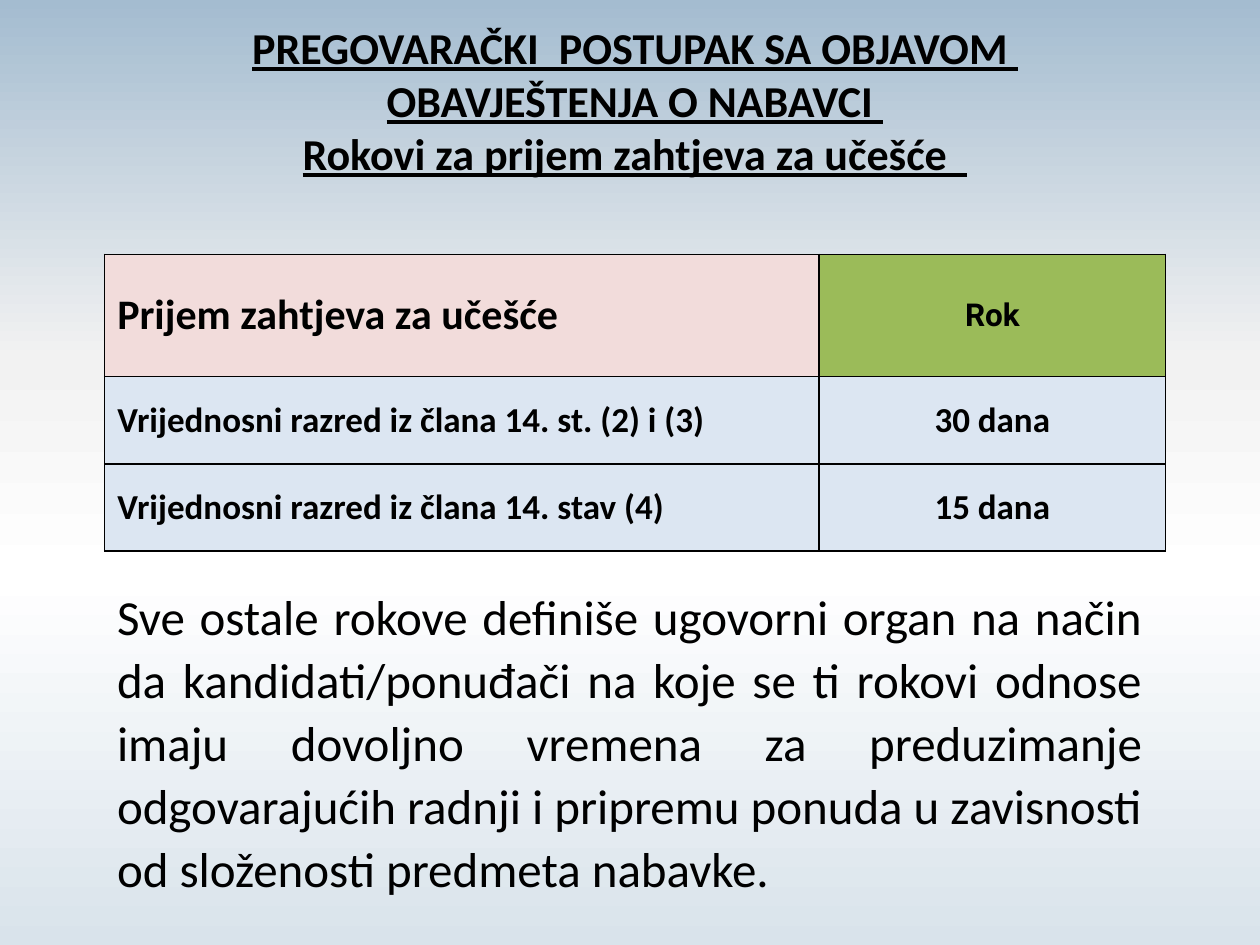
from copy import deepcopy

from lxml import etree
from pptx import Presentation
from pptx.dml.color import RGBColor
from pptx.enum.text import MSO_ANCHOR, MSO_AUTO_SIZE, PP_ALIGN
from pptx.oxml.ns import qn
from pptx.util import Cm, Pt

LEFT, CENTER, JUSTIFY = PP_ALIGN.LEFT, PP_ALIGN.CENTER, PP_ALIGN.JUSTIFY
MIDDLE = MSO_ANCHOR.MIDDLE
NO_FIT = MSO_AUTO_SIZE.NONE
GROW = MSO_AUTO_SIZE.SHAPE_TO_FIT_TEXT
TITLE_ONLY = 5


def color(hex_string):
    return RGBColor.from_string(hex_string)


def write(frame, text, size, font="Calibri", bold=False, underline=False,
          align=LEFT, line_spacing=1.0):
    """Fill the first paragraph; each newline becomes a line break."""
    para = frame.paragraphs[0]
    para.alignment = align
    para.line_spacing = line_spacing
    for number, line in enumerate(text.split("\n")):
        if number:
            para.add_line_break()
        span = para.add_run()
        span.text = line
        span.font.name = font
        span.font.size = Pt(size)
        span.font.bold = bold
        span.font.underline = underline
        span.font.color.rgb = color("000000")
    # A break needs the run format too, or it takes the default height.
    for line_break in para._p.findall(qn("a:br")):
        line_break.append(deepcopy(span._r.rPr))


deck = Presentation()
deck.slide_width, deck.slide_height = Cm(25.4), Cm(19.05)
page = deck.slides.add_slide(deck.slide_layouts[TITLE_ONLY])

# Background gradient, top to bottom
fill = page.background.fill
fill.gradient()
fill.gradient_angle = 270
stops = page.background._cSld.find(".//" + qn("a:gsLst"))
for stop in list(stops):
    stops.remove(stop)
for percent, shade in [(0, "A4BCD0"), (38, "F2F2F2"), (61, "FFFFFF"), (100, "D9E3EB")]:
    stop = etree.SubElement(stops, qn("a:gs"), pos=str(percent * 1000))
    etree.SubElement(stop, qn("a:srgbClr"), val=shade)

# Title
title = page.shapes.title
title.left, title.top, title.width, title.height = Cm(1.27), Cm(1.07), Cm(23.06), Cm(1.9)
title.text_frame.auto_size = NO_FIT
title.text_frame.vertical_anchor = MIDDLE
write(title.text_frame,
      "PREGOVARAČKI  POSTUPAK SA OBJAVOM \n"
      "OBAVJEŠTENJA O NABAVCI \n"
      "Rokovi za prijem zahtjeva za učešće  ",
      size=25.2, bold=True, underline=True, align=CENTER)

# Table of deadlines: text, size, font, fill
rows = [
    [("Prijem zahtjeva za učešće", 24, "Calibri", "F2DCDB"),
     ("Rok", 18, "Roboto", "9BBB59")],
    [("Vrijednosni razred iz člana 14. st. (2) i (3)", 20, "Calibri", "DCE6F2"),
     ("30 dana", 20, "Calibri", "DCE6F2")],
    [("Vrijednosni razred iz člana 14. stav (4)", 20, "Calibri", "DCE6F2"),
     ("15 dana", 20, "Calibri", "DCE6F2")],
]
table = page.shapes.add_table(3, 2, Cm(2.11), Cm(5.13), Cm(21.39), Cm(5.98)).table
for column, width in zip(table.columns, (14.4, 6.99)):
    column.width = Cm(width)
for row, height in zip(table.rows, (2.46, 1.76, 1.76)):
    row.height = Cm(height)

for row_number, row in enumerate(rows):
    for column_number, (text, size, font, shade) in enumerate(row):
        cell = table.cell(row_number, column_number)
        cell.vertical_anchor = MIDDLE
        write(cell.text_frame, text, size, font=font, bold=True,
              align=CENTER if column_number else LEFT)
        cell.fill.solid()
        cell.fill.fore_color.rgb = color(shade)
        properties = cell._tc.get_or_add_tcPr()
        for position, side in enumerate(("a:lnL", "a:lnR", "a:lnT", "a:lnB")):
            border = etree.Element(qn(side), w=str(Pt(1)))
            solid = etree.SubElement(border, qn("a:solidFill"))
            etree.SubElement(solid, qn("a:srgbClr"), val="000000")
            properties.insert(position, border)

# Closing paragraph
box = page.shapes.add_textbox(Cm(2.11), Cm(11.61), Cm(21.16), Cm(6.6))
box.text_frame.word_wrap = True
box.text_frame.auto_size = GROW
write(box.text_frame,
      "Sve ostale rokove definiše ugovorni organ na način da kandidati/ponuđači "
      "na koje se ti rokovi odnose imaju dovoljno vremena za preduzimanje "
      "odgovarajućih radnji i pripremu ponuda u zavisnosti od složenosti "
      "predmeta nabavke. ",
      size=28, align=JUSTIFY, line_spacing=1.07)

deck.save("out.pptx")
